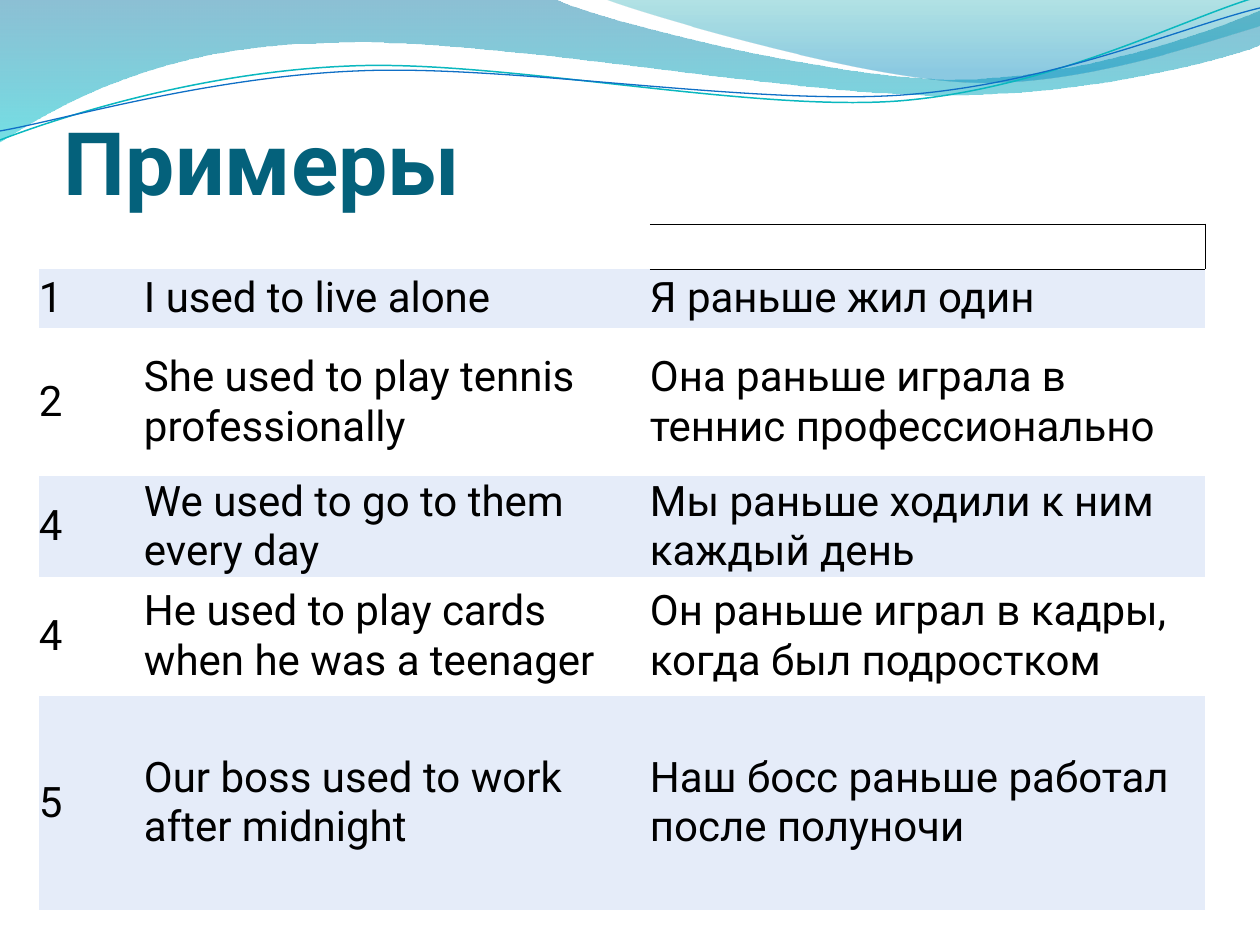
from lxml import etree
from pptx import Presentation
from pptx.dml.color import RGBColor
from pptx.enum.text import MSO_ANCHOR
from pptx.oxml import parse_xml
from pptx.oxml.ns import nsdecls, qn
from pptx.util import Pt

FONT = "Roboto"
COLORS = {"title": "04617B", "text": "000000", "band": "E5ECF9", "plain": "FFFFFF",
          "teal line": "0AB8BF", "blue line": "0F6FC6"}

TITLE = "Примеры"
EXAMPLES = [
    ("1", "I used to live alone", "Я раньше жил один"),
    ("2", "She used to play tennis professionally", "Она раньше играла в теннис профессионально"),
    ("4", "We used to go to them every day", "Мы раньше ходили к ним каждый день"),
    ("4", "He used to play cards when he was a teenager",
     "Он раньше играл в кадры, когда был подростком"),
    ("5", "Our boss used to work after midnight", "Наш босс раньше работал после полуночи"),
]
TABLE_LEFT, TABLE_TOP = 39, 224
COLUMN_WIDTHS = [105, 506, 555]
ROW_HEIGHTS = [45, 59, 148, 89, 119, 214]

# A segment of one point is a straight line, of three points a Bezier curve.
# Gradient stops: position %, colour, opacity %.
WAVES = [
    ((0, 0), [[(554, -1)],
              [(600, 21), (837, 79), (955, 79)], [(1075, 79), (1207, 33), (1260, 11)],
              [(1261, 45)],
              [(1238, 55), (1096, 96), (940, 95)], [(784, 95), (481, 35), (324, 43)],
              [(163, 45), (58, 105), (-1, 142)], [(0, 0)]],
     [(0, "0074A1", 45), (100, "00C6CF", 55)]),
    ((604, -1), [[(641, 14), (859, 78), (969, 82)], [(1079, 87), (1211, 40), (1260, 26)],
                 [(1260, 0)], [(604, -1)]],
     [(0, "00A1A9", 30), (80, "008BBF", 45)]),
]
STRANDS = [
    ((0, 140), [[(60, 117), (199, 72), (349, 66)], [(498, 59), (747, 112), (898, 101)],
                [(1050, 89), (1182, 19), (1257, -3)]], "teal line", 0.85),
    ((0, 131), [[(59, 121), (207, 77), (357, 71)], [(508, 64), (752, 106), (903, 95)],
                [(1053, 84), (1185, 26), (1260, 8)]], "blue line", 0.75),
]


def px(length):
    return round(length * 914400 / 126)


def color(name):
    return RGBColor.from_string(COLORS[name])


def add_outline(page, start, segments, close):
    """Draw the outline through all points, then join each three into a curve."""
    points = [(px(x), px(y)) for segment in segments for x, y in segment]
    builder = page.shapes.build_freeform(px(start[0]), px(start[1]), scale=1.0)
    builder.add_line_segments(points, close=close)
    shape = builder.convert_to_shape()
    shape.shadow.inherit = False
    lines = iter(list(shape.element.iter(qn("a:lnTo"))))
    for segment in segments:
        steps = [next(lines) for _ in segment]
        if len(steps) == 3:
            curve = etree.Element(qn("a:cubicBezTo"))
            steps[0].addprevious(curve)
            for step in steps:
                curve.append(step[0])
                step.getparent().remove(step)
    return shape


def fill_gradient(shape, stops):
    """Fill from top to bottom with partly transparent colours."""
    stop_xml = "".join(
        f'<a:gs pos="{place * 1000}"><a:srgbClr val="{value}">'
        f'<a:alpha val="{opacity * 1000}"/></a:srgbClr></a:gs>'
        for place, value, opacity in stops)
    gradient = parse_xml(f'<a:gradFill {nsdecls("a")} rotWithShape="1"><a:gsLst>{stop_xml}</a:gsLst>'
                         '<a:lin ang="5400000" scaled="0"/></a:gradFill>')
    shape.element.spPr.find(qn("a:custGeom")).addnext(gradient)


def add_border(cell, sides):
    properties = cell._tc.get_or_add_tcPr()
    for index, side in enumerate(sides):
        line = parse_xml(f'<a:ln{side} {nsdecls("a")} w="6350"><a:solidFill>'
                         f'<a:srgbClr val="{COLORS["text"]}"/></a:solidFill></a:ln{side}>')
        properties.insert(index, line)


def style_text(para, size, name, bold=False):
    for span in para.runs:
        span.font.name = FONT
        span.font.size = Pt(size)
        span.font.bold = bold
        span.font.color.rgb = color(name)


def add_title(page):
    box = page.shapes.add_textbox(px(64), px(55), px(1134), px(158))
    frame = box.text_frame
    frame.word_wrap = True
    frame.vertical_anchor = MSO_ANCHOR.BOTTOM
    frame.margin_left = frame.margin_right = frame.margin_bottom = 0
    frame.margin_top = px(6)
    frame.text = TITLE
    style_text(frame.paragraphs[0], 50, "title", bold=True)


def add_examples(page):
    rows = [("", "", ""), *EXAMPLES]
    graphic = page.shapes.add_table(len(rows), len(COLUMN_WIDTHS), px(TABLE_LEFT), px(TABLE_TOP),
                                    px(sum(COLUMN_WIDTHS)), px(sum(ROW_HEIGHTS)))
    table = graphic.table
    table.first_row = table.horz_banding = False
    style = next(graphic._element.iter(qn("a:tableStyleId")))
    style.text = "{2D5ABB26-0587-4C30-8999-92F81FD0307C}"  # no style, no grid
    for column, width in zip(table.columns, COLUMN_WIDTHS):
        column.width = px(width)
    for row_index, (row, height, texts) in enumerate(zip(table.rows, ROW_HEIGHTS, rows)):
        row.height = px(height)
        for cell, text in zip(row.cells, texts):
            cell.margin_left = cell.margin_right = cell.margin_top = cell.margin_bottom = 0
            cell.vertical_anchor = MSO_ANCHOR.MIDDLE
            cell.fill.solid()
            cell.fill.fore_color.rgb = color("band" if row_index % 2 else "plain")
            if text:
                cell.text = text
                style_text(cell.text_frame.paragraphs[0], 24, "text")
    corner = table.cell(0, len(COLUMN_WIDTHS) - 1)
    corner.fill.background()
    add_border(corner, "RTB")


def main():
    deck = Presentation()
    deck.slide_width, deck.slide_height = px(1260), px(945)
    page = deck.slides.add_slide(deck.slide_layouts[6])
    for start, segments, stops in WAVES:
        wave = add_outline(page, start, segments, close=True)
        wave.line.fill.background()
        fill_gradient(wave, stops)
    for start, segments, name, width in STRANDS:
        strand = add_outline(page, start, segments, close=False)
        strand.fill.background()
        strand.line.color.rgb = color(name)
        strand.line.width = Pt(width)
    add_title(page)
    add_examples(page)
    deck.save("out.pptx")


if __name__ == "__main__":
    main()
